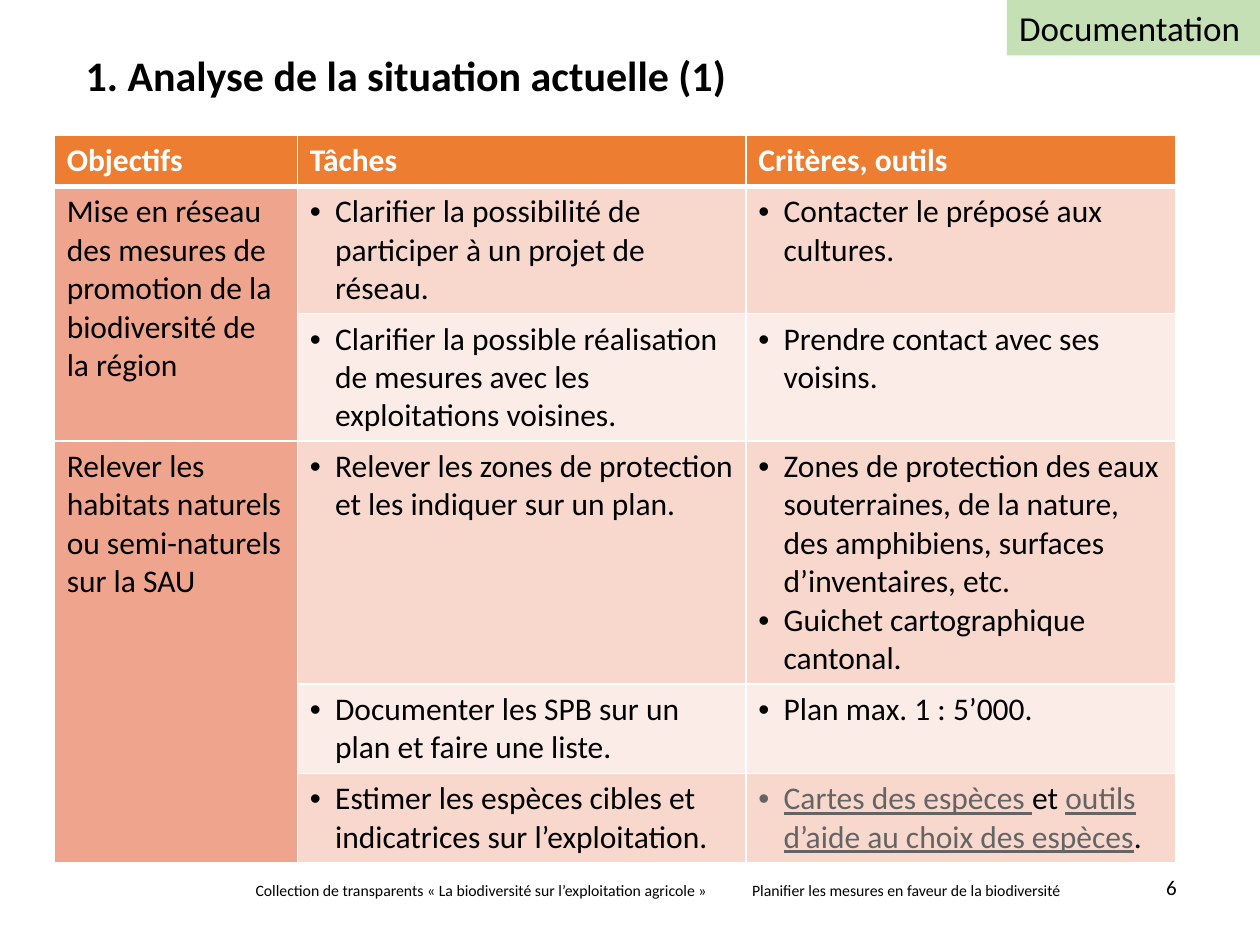
from lxml import etree
from pptx import Presentation
from pptx.dml.color import RGBColor
from pptx.enum.shapes import MSO_SHAPE
from pptx.enum.text import MSO_ANCHOR, PP_ALIGN
from pptx.oxml.ns import qn
from pptx.util import Inches, Pt

RECT = MSO_SHAPE.RECTANGLE
TOP, BOTTOM = MSO_ANCHOR.TOP, MSO_ANCHOR.BOTTOM
LEFT, RIGHT = PP_ALIGN.LEFT, PP_ALIGN.RIGHT

FONT = "Calibri"
BLACK, WHITE, GREY, GREEN = "000000", "FFFFFF", "646464", "C5E0B4"
ORANGE, SALMON = "ED7D31", "EFA48D"
BANDS = ["F8D7CD", "FCECE8"]

TITLE_ONLY = 5


def rgb(value):
    return RGBColor.from_string(value)


def add_run(p, text, size=18, color=BLACK, bold=False, underline=False):
    r = p.add_run()
    r.text = text
    r.font.name = FONT
    r.font.size = Pt(size)
    r.font.bold = bold
    r.font.underline = underline
    r.font.color.rgb = rgb(color)


def add_bullet(p):
    pPr = p._p.get_or_add_pPr()
    pPr.set("marL", str(Inches(0.2)))
    pPr.set("indent", str(-Inches(0.2)))
    etree.SubElement(pPr, qn("a:buFont"), typeface="Arial")
    etree.SubElement(pPr, qn("a:buChar"), char="•")


def set_borders(cell, **widths):
    tcPr = cell._tc.get_or_add_tcPr()
    for i, side in enumerate("LRTB"):
        ln = etree.Element(qn(f"a:ln{side}"), w=str(Pt(widths.get(side, 1))))
        fill = etree.SubElement(ln, qn("a:solidFill"))
        etree.SubElement(fill, qn("a:srgbClr"), val=WHITE)
        tcPr.insert(i, ln)


class SlideBuilder:
    def __init__(self, prs):
        self.s = prs.slides.add_slide(prs.slide_layouts[TITLE_ONLY])

    def title(self, text, box):
        sp = self.s.shapes.title
        sp.left, sp.top, sp.width, sp.height = map(Inches, box)
        tf = sp.text_frame
        tf.margin_left = tf.margin_right = tf.margin_top = tf.margin_bottom = 0
        tf.vertical_anchor = TOP
        p = tf.paragraphs[0]
        p.alignment = LEFT
        p.line_spacing = 0.9
        add_run(p, text, size=24, bold=True)

    def text(self, text, box, size, align=LEFT, anchor=TOP, margin=0.1, wrap=True):
        tf = self.s.shapes.add_textbox(*map(Inches, box)).text_frame
        tf.word_wrap = wrap
        tf.vertical_anchor = anchor
        tf.margin_left = tf.margin_right = Inches(margin)
        p = tf.paragraphs[0]
        p.alignment = align
        add_run(p, text, size=size)

    def tag(self, text, box, fill):
        sp = self.s.shapes.add_shape(RECT, *map(Inches, box))
        sp.shadow.inherit = False
        sp.fill.solid()
        sp.fill.fore_color.rgb = rgb(fill)
        sp.line.fill.background()
        tf = sp.text_frame
        tf.word_wrap = False
        tf.vertical_anchor = TOP
        p = tf.paragraphs[0]
        p.alignment = LEFT
        add_run(p, text, size=20)

    def cell(self, cell, paragraphs, fill, bullets=False, **fmt):
        """Each paragraph is a string or a list of (text, format) runs."""
        cell.fill.solid()
        cell.fill.fore_color.rgb = rgb(fill)
        tf = cell.text_frame
        for i, runs in enumerate(paragraphs):
            p = tf.add_paragraph() if i else tf.paragraphs[0]
            if bullets:
                add_bullet(p)
            for text, extra in [(runs, {})] if isinstance(runs, str) else runs:
                add_run(p, text, **{**fmt, **extra})

    def table(self, left, top, widths, heights, header, goals, rows):
        box = (left, top, sum(widths), sum(heights))
        table = self.s.shapes.add_table(len(heights), len(widths), *map(Inches, box)).table
        for column, width in zip(table.columns, widths):
            column.width = Inches(width)
        for row, height in zip(table.rows, heights):
            row.height = Inches(height)

        # Header row
        for c, text in enumerate(header):
            self.cell(table.cell(0, c), [text], ORANGE, color=WHITE, bold=True)

        # Tasks and criteria, in alternating bands
        for r, row in enumerate(rows, start=1):
            for c, paragraphs in enumerate(row, start=1):
                self.cell(table.cell(r, c), paragraphs, BANDS[(r - 1) % 2], bullets=True)

        # Goals, each merged over its tasks
        first = 1
        for text, span in goals:
            for r in range(first, first + span):
                self.cell(table.cell(r, 0), [text] if r == first else [], SALMON)
            table.cell(first, 0).merge(table.cell(first + span - 1, 0))
            first += span

        for r in range(len(heights)):
            heavy = {0: {"B": 3}, 1: {"T": 3}}.get(r, {})
            for c in range(len(widths)):
                set_borders(table.cell(r, c), **heavy)


LINK = {"color": GREY, "underline": True}
HEADER = ["Objectifs", "Tâches", "Critères, outils"]
GOALS = [
    ("Mise en réseau des mesures de promotion de la biodiversité de la région", 2),
    ("Relever les habitats naturels ou semi-naturels sur la SAU", 3),
]
ROWS = [
    (["Clarifier la possibilité de participer à un projet de réseau."],
     ["Contacter le préposé aux cultures."]),
    (["Clarifier la possible réalisation de mesures avec les exploitations voisines."],
     ["Prendre contact avec ses voisins."]),
    (["Relever les zones de protection et les indiquer sur un plan."],
     ["Zones de protection des eaux souterraines, de la nature, des amphibiens, "
      "surfaces d’inventaires, etc.",
      "Guichet cartographique cantonal."]),
    (["Documenter les SPB sur un plan et faire une liste."],
     ["Plan max. 1 : 5’000."]),
    (["Estimer les espèces cibles et indicatrices sur l’exploitation."],
     [[("Cartes des espèces ", LINK), ("et ", {}),
       ("outils d’aide au choix des espèces", LINK), (".", {})]]),
]


def main():
    prs = Presentation()
    prs.slide_width, prs.slide_height = Inches(10), Inches(7.5)
    slide = SlideBuilder(prs)

    # Footer
    slide.text("Collection de transparents « La biodiversité sur l’exploitation agricole »",
               (1.93, 6.94, 3.86, 0.25), size=9, wrap=False)
    slide.text("Planifier les mesures en faveur de la biodiversité",
               (5.87, 6.94, 2.68, 0.25), size=9, wrap=False)
    slide.text("6", (8.47, 6.8, 0.87, 0.39), size=12, align=RIGHT, anchor=BOTTOM, margin=0)

    # Title, table and corner tag
    slide.title("1. Analyse de la situation actuelle (1)", (0.68, 0.44, 8.66, 0.55))
    slide.table(0.43, 1.07, [1.93, 3.56, 3.41], [0.41, 1.01, 1.01, 1.93, 0.71, 0.71],
                HEADER, GOALS, ROWS)
    slide.tag("Documentation", (7.99, 0, 2.01, 0.44), GREEN)

    prs.save("out.pptx")


if __name__ == "__main__":
    main()
